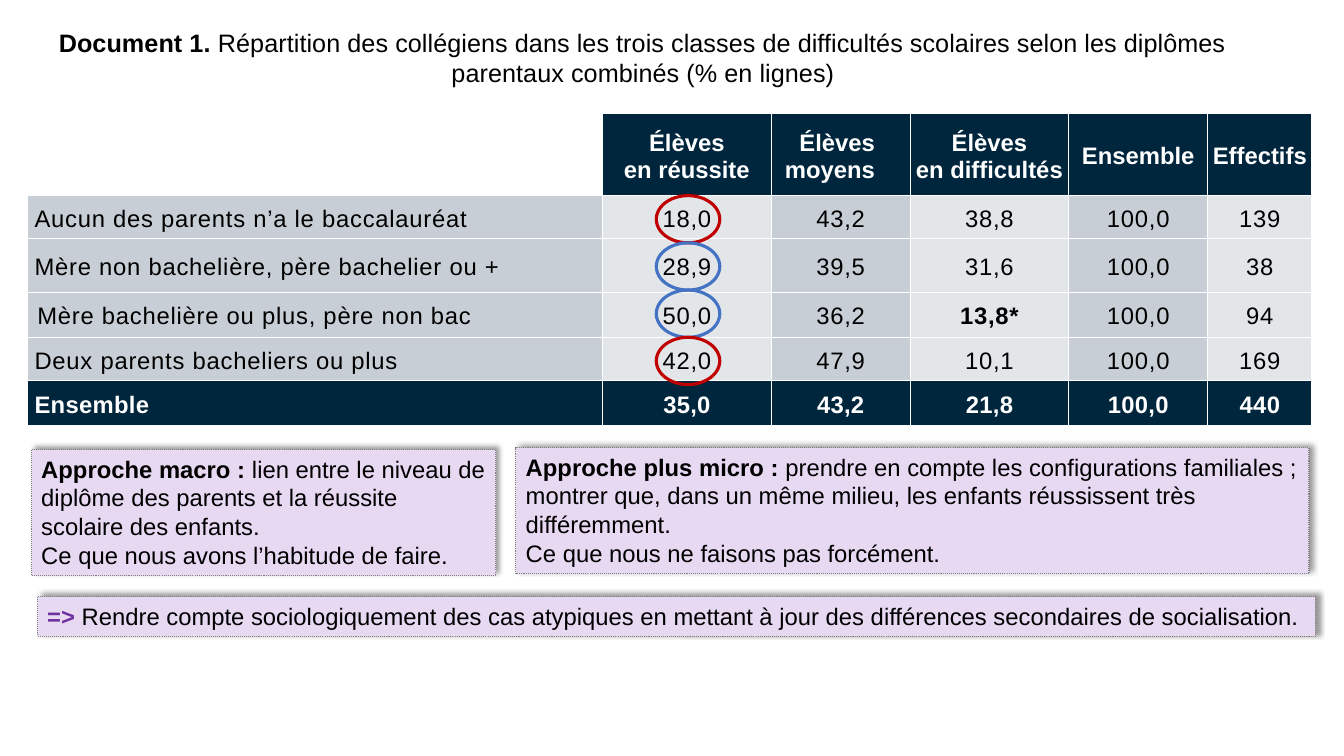
from lxml import etree
from pptx import Presentation
from pptx.dml.color import RGBColor
from pptx.enum.dml import MSO_LINE
from pptx.enum.shapes import MSO_SHAPE
from pptx.enum.text import MSO_ANCHOR, MSO_AUTO_SIZE, PP_ALIGN
from pptx.oxml import parse_xml
from pptx.oxml.ns import nsdecls, qn
from pptx.util import Cm, Pt

LEFT, MID, RIGHT = PP_ALIGN.LEFT, PP_ALIGN.CENTER, PP_ALIGN.RIGHT
TOP, MIDDLE = MSO_ANCHOR.TOP, MSO_ANCHOR.MIDDLE
FIXED = MSO_AUTO_SIZE.NONE
RECT, OVAL = MSO_SHAPE.RECTANGLE, MSO_SHAPE.OVAL
DOTS = MSO_LINE.ROUND_DOT

WHITE = RGBColor(0xFF, 0xFF, 0xFF)
BLACK = RGBColor(0, 0, 0)
NAVY = RGBColor(0x00, 0x26, 0x3D)
DARK = RGBColor(0xC8, 0xCE, 0xD5)
PALE = RGBColor(0xE2, 0xE6, 0xE9)
LILAC = RGBColor(0xE8, 0xD9, 0xF3)
PURPLE = RGBColor(0x70, 0x30, 0xA0)
GRAY = RGBColor(0x80, 0x80, 0x80)
RED = RGBColor(0xC0, 0x00, 0x00)
BLUE = RGBColor(0x44, 0x72, 0xC4)

# Each paragraph is a list of (text, bold[, colour]) runs.
TITLE = [[("Document 1. ", True),
          ("Répartition des collégiens dans les trois classes de difficultés "
           "scolaires selon les diplômes parentaux combinés (% en lignes)", False)]]
ROWS = [
    ["", "Élèves\nen réussite", "Élèves\nmoyens", "Élèves\nen difficultés",
     "Ensemble", "Effectifs"],
    ["Aucun des parents n’a le baccalauréat", "18,0", "43,2", "38,8", "100,0", "139"],
    ["Mère non bachelière, père bachelier ou +", "28,9", "39,5", "31,6", "100,0", "38"],
    ["Mère bachelière ou plus, père non bac", "50,0", "36,2", "13,8*", "100,0", "94"],
    ["Deux parents bacheliers ou plus", "42,0", "47,9", "10,1", "100,0", "169"],
    ["Ensemble", "35,0", "43,2", "21,8", "100,0", "440"],
]
WIDTHS = [14.5, 4.24, 3.51, 3.99, 3.51, 2.62]
HEIGHTS = [2.06, 1.09, 1.35, 1.14, 1.09, 1.12]
NOTES = [
    ((0.79, 11.33, 11.71, 3.18),
     [[("Approche macro : ", True),
       ("lien entre le niveau de diplôme des parents et la réussite "
        "scolaire des enfants.", False)],
      [("Ce que nous avons l’habitude de faire.", False)]]),
    ((13, 11.28, 19.99, 3.18),
     [[("Approche plus micro : ", True),
       ("prendre en compte les configurations familiales ; montrer que, dans un "
        "même milieu, les enfants réussissent très différemment.", False)],
      [("Ce que nous ne faisons pas forcément.", False)]]),
    ((0.94, 15.04, 32.21, 0.99),
     [[("=>", True, PURPLE),
       (" Rendre compte sociologiquement des cas atypiques en mettant à jour des "
        "différences secondaires de socialisation.", False)]]),
]
RINGS = [RED, BLUE, BLUE, RED]
RING_X, RING_Y, RING_W, RING_H = 16.54, 4.93, 1.6, 1.19


def write(frame, paras, size=17, color=BLACK, align=LEFT, track=0, before=0):
    """Fill a frame with paragraphs of runs; track is in hundredths of a point."""
    for i, runs in enumerate(paras):
        para = frame.add_paragraph() if i else frame.paragraphs[0]
        para.alignment = align
        para.space_before = Pt(before)
        for text, bold, *tint in runs:
            run = para.add_run()
            run.text = text
            font = run.font
            font.name, font.size, font.bold = "Arial", Pt(size), bold
            font.color.rgb = tint[0] if tint else color
            if track:
                font._element.set("spc", str(track))


def edge(cell):
    """Draw thin white borders on the four sides of a cell."""
    props = cell._tc.get_or_add_tcPr()
    for side in ("a:lnL", "a:lnR", "a:lnT", "a:lnB"):
        line = etree.SubElement(props, qn(side), w=str(Pt(0.75)))
        fill = etree.SubElement(line, qn("a:solidFill"))
        etree.SubElement(fill, qn("a:srgbClr"), val=str(WHITE))


def style(cell, row, col):
    text = ROWS[row][col]
    head, total = row == 0, row == len(ROWS) - 1
    navy = head or total
    edge(cell)
    cell.vertical_anchor = MIDDLE
    cell.margin_left = cell.margin_right = cell.margin_bottom = 0
    cell.margin_top = Cm(0.08)
    if not text:
        cell.fill.background()
        return
    cell.fill.solid()
    cell.fill.fore_color.rgb = NAVY if navy else PALE if col % 2 else DARK
    align = MID if col else LEFT
    if not col:
        cell.margin_left = Cm(0.25 if row == 3 else 0.18)
    if head and col == 2:
        align = RIGHT
        cell.margin_right = Cm(0.89)
    bold = navy or text.endswith("*")
    write(cell.text_frame, [[(part, bold)] for part in text.split("\n")],
          color=WHITE if navy else BLACK, align=align,
          track=0 if head else 20 if total else 55, before=0 if col else 2)


def shade(shape):
    """Cast a soft shadow up and to the right."""
    shape._element.spPr.append(parse_xml(
        f'<a:effectLst {nsdecls("a")}><a:outerShdw blurRad="{Pt(4)}" dist="{Pt(3)}" '
        f'dir="{315 * 60000}" algn="bl" rotWithShape="0"><a:srgbClr val="000000">'
        '<a:alpha val="40000"/></a:srgbClr></a:outerShdw></a:effectLst>'))


def main():
    deck = Presentation()
    deck.slide_width, deck.slide_height = Cm(33.87), Cm(19.05)
    slide = deck.slides.add_slide(deck.slide_layouts[5])
    shapes = slide.shapes

    title = shapes.title
    title.left, title.top, title.width, title.height = map(Cm, (0.03, 0.56, 32.36, 1.8))
    title.text_frame.auto_size = FIXED
    title.text_frame.vertical_anchor = TOP
    write(title.text_frame, TITLE, size=18, align=MID, track=5)

    table = shapes.add_table(len(ROWS), len(WIDTHS), Cm(0.69), Cm(2.87),
                             Cm(sum(WIDTHS)), Cm(sum(HEIGHTS))).table
    table.first_row = table.horz_banding = False
    for col, width in enumerate(WIDTHS):
        table.columns[col].width = Cm(width)
    for row, height in enumerate(HEIGHTS):
        table.rows[row].height = Cm(height)
        for col in range(len(WIDTHS)):
            style(table.cell(row, col), row, col)

    for place, paras in NOTES:
        note = shapes.add_shape(RECT, *map(Cm, place))
        note.fill.solid()
        note.fill.fore_color.rgb = LILAC
        note.line.color.rgb = GRAY
        note.line.width = Pt(0.75)
        note.line.dash_style = DOTS
        shade(note)
        note.text_frame.word_wrap = True
        note.text_frame.vertical_anchor = TOP
        write(note.text_frame, paras)

    for i, color in enumerate(RINGS):
        ring = shapes.add_shape(OVAL, Cm(RING_X), Cm(RING_Y + i * RING_H),
                                Cm(RING_W), Cm(RING_H))
        ring.shadow.inherit = False
        ring.fill.background()
        ring.line.color.rgb = color
        ring.line.width = Pt(2.25)

    deck.save("out.pptx")


if __name__ == "__main__":
    main()
